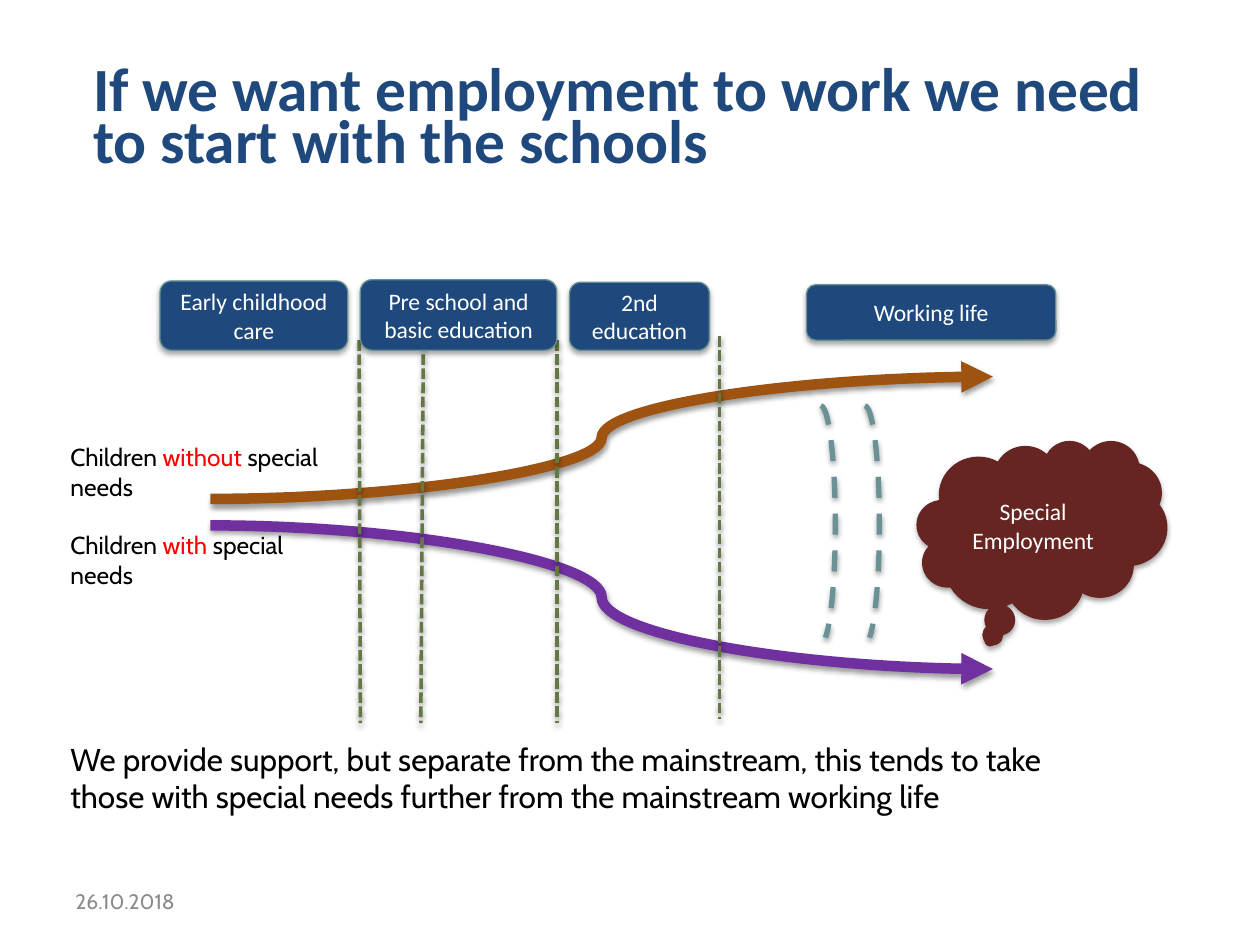
from lxml.etree import SubElement
from pptx import Presentation
from pptx.dml.color import RGBColor
from pptx.enum.dml import MSO_LINE
from pptx.enum.shapes import MSO_CONNECTOR, MSO_SHAPE
from pptx.enum.text import MSO_ANCHOR, PP_ALIGN
from pptx.oxml.ns import qn
from pptx.util import Inches, Pt

NAVY, MAROON, TEAL, GREEN = "1F497D", "662520", "6A9196", "647843"
WHITE, BLACK, RED, GREY = "FFFFFF", "000000", "FF0000", "8C8C8C"

# Content: boxes are left, top, width, height
STAGES = [
    ("Early childhood care", (1.27, 2.23, 1.49, 0.55)),
    ("Pre school and basic education", (2.86, 2.22, 1.56, 0.56)),
    ("2nd education", (4.52, 2.24, 1.11, 0.54)),
    ("Working life", (6.4, 2.26, 1.98, 0.44)),
]
PATHWAYS = [
    ((1.67, 3.96, 7.88, 2.99), "9E5410"),
    ((1.67, 4.17, 7.88, 5.31), "7030A0"),
]
STAGE_LIMITS = [
    (2.85, 2.7, 2.86, 5.74),
    (3.36, 2.7, 3.34, 5.74),
    (4.42, 2.7, 4.42, 5.74),
    (5.71, 2.67, 5.71, 5.71),
]
BARRIER_LEFTS = [6.75, 6.4]
CLOUD = ("Special Employment", (7.28, 3.5, 1.98, 1.41))
TITLE = "If we want employment to work we need to start with the schools"
GROUPS = [("without ", 3.46), ("with ", 4.16)]
SUMMARY = ("We provide support, but separate from the mainstream, this tends to take "
           "those with special needs further from the mainstream working life")

prs = Presentation()
prs.slide_width, prs.slide_height = Inches(10), Inches(7.5)
slide = prs.slides.add_slide(prs.slide_layouts[6])


def rgb(value):
    return RGBColor.from_string(value)


def inches(box):
    return [Inches(length) for length in box]


def style_line(line, color, width, dash=None):
    line.color.rgb = rgb(color)
    line.width = Pt(width)
    if dash:
        line.dash_style = dash


def add_shadow(part, opacity, distance):
    properties = part._element.spPr
    effects = properties.find(qn("a:effectLst"))
    if effects is None:
        effects = SubElement(properties, qn("a:effectLst"))
    shadow = SubElement(effects, qn("a:outerShdw"), blurRad=str(Pt(3.1)),
                        dist=str(Pt(distance)), dir="5400000", rotWithShape="0")
    color = SubElement(shadow, qn("a:srgbClr"), val=BLACK)
    SubElement(color, qn("a:alpha"), val=str(opacity * 1000))


def add_line(kind, ends, color, width, dash=None, arrow=False):
    connector = slide.shapes.add_connector(kind, *inches(ends))
    style_line(connector.line, color, width, dash)
    if arrow:
        SubElement(connector.line._get_or_add_ln(), qn("a:tailEnd"), type="triangle")
    add_shadow(connector, 38, 1.6)


def style_font(font, size, name, color, bold=False):
    font.size, font.name, font.bold = Pt(size), name, bold
    font.color.rgb = rgb(color)


def add_block(kind, text, box, fill, outline):
    block = slide.shapes.add_shape(kind, *inches(box))
    block.fill.solid()
    block.fill.fore_color.rgb = rgb(fill)
    style_line(block.line, outline, 0.75)
    block.shadow.inherit = False
    add_shadow(block, 35, 1.8)
    frame = block.text_frame
    frame.text = text
    frame.word_wrap = True
    frame.vertical_anchor = MSO_ANCHOR.MIDDLE
    frame.paragraphs[0].alignment = PP_ALIGN.CENTER
    style_font(frame.paragraphs[0].runs[0].font, 13.5, "Calibri", WHITE)


def add_text(parts, box, size, name="Cabin", bold=False):
    frame = slide.shapes.add_textbox(*inches(box)).text_frame
    frame.word_wrap = True
    paragraph = frame.paragraphs[0]
    for text, color in parts:
        run = paragraph.add_run()
        run.text = text
        style_font(run.font, size, name, color, bold)
    return frame


# Diverging pathways and the limits between stages
for ends, color in PATHWAYS:
    add_line(MSO_CONNECTOR.CURVE, ends, color, 6, arrow=True)
for ends in STAGE_LIMITS:
    add_line(MSO_CONNECTOR.STRAIGHT, ends, GREEN, 2, MSO_LINE.SQUARE_DOT)

# Stages of life and the special employment cloud
for text, box in STAGES:
    add_block(MSO_SHAPE.ROUNDED_RECTANGLE, text, box, NAVY, "678F94")
add_block(MSO_SHAPE.CLOUD_CALLOUT, *CLOUD, MAROON, MAROON)

# Barriers before working life: right-hand half arcs
for left in BARRIER_LEFTS:
    barrier = slide.shapes.add_shape(MSO_SHAPE.ARC, *inches((left, 3.22, 0.23, 1.89)))
    barrier.adjustments[0], barrier.adjustments[1] = 162, 52.58
    barrier.fill.background()
    style_line(barrier.line, TEAL, 3, MSO_LINE.DASH)
    barrier.shadow.inherit = False
    add_shadow(barrier, 38, 1.6)

# Title, date, group labels and summary
title = add_text([(TITLE, NAVY)], (0.64, 0.51, 8.87, 0.95), 35.1, "Calibri", True)
title.paragraphs[0].line_spacing = 0.7
date = add_text([("26.10.2018", GREY)], (0.5, 6.95, 1.18, 0.4), 12)
date.vertical_anchor = MSO_ANCHOR.MIDDLE
for word, top in GROUPS:
    add_text([("Children ", BLACK), (word, RED), ("special needs", BLACK)],
             (0.46, top, 2.42, 0.57), 14)
add_text([(SUMMARY, BLACK)], (0.46, 5.82, 8.51, 0.71), 18)

prs.save("out.pptx")
